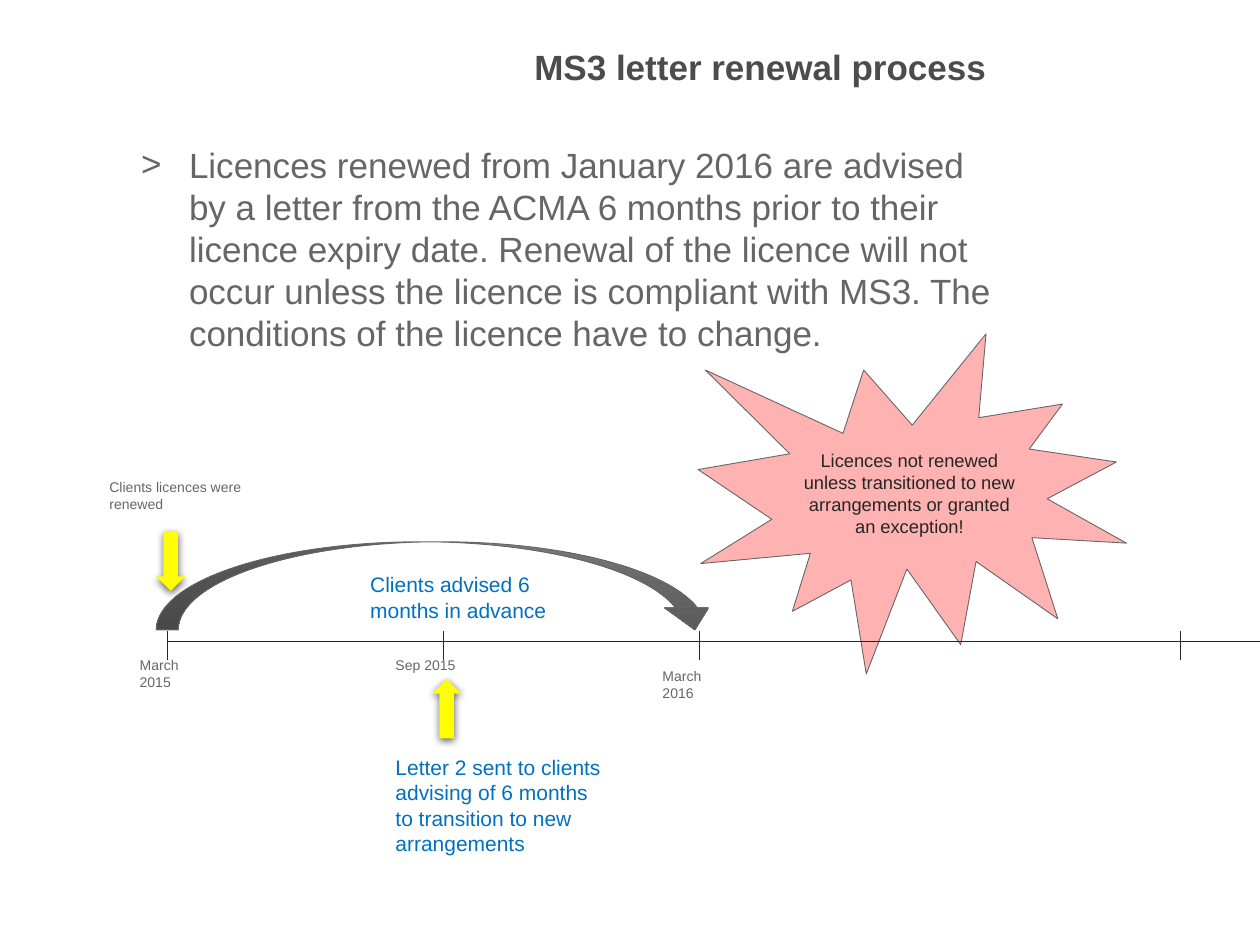
from dataclasses import dataclass

from lxml import etree
from pptx import Presentation
from pptx.dml.color import RGBColor
from pptx.enum.dml import MSO_FILL
from pptx.enum.shapes import MSO_CONNECTOR, MSO_SHAPE
from pptx.enum.text import MSO_ANCHOR, MSO_AUTO_SIZE, PP_ALIGN
from pptx.oxml.ns import qn
from pptx.util import Emu, Inches, Pt

STRAIGHT = MSO_CONNECTOR.STRAIGHT
DOWN_ARROW = MSO_SHAPE.DOWN_ARROW
CURVED_ARROW = MSO_SHAPE.CURVED_DOWN_ARROW
BURST = MSO_SHAPE.EXPLOSION1
TOP, MIDDLE = MSO_ANCHOR.TOP, MSO_ANCHOR.MIDDLE
LEFT, CENTER = PP_ALIGN.LEFT, PP_ALIGN.CENTER
SOLID = MSO_FILL.SOLID

WIDTH, HEIGHT = 10, 7.5
AXIS_Y = 5.09
TICK_TOP, TICK_BOTTOM = 5.01, 5.24
START, ADVICE, EXPIRY, LAST = 1.33, 3.52, 5.55, 9.37


@dataclass(frozen=True)
class Theme:
    font: str = "Arial"
    heading: str = "4C4C4C"
    grey: str = "666666"
    blue: str = "0070C0"
    dark: str = "262626"
    yellow: str = "FFFF00"
    red: str = "FF0000"
    shadow: str = "000000"
    arc: tuple = ((0, "797979"), (50, "666666"), (100, "5B5B5B"))
    large: float = 20
    note: float = 12
    burst: float = 10.5
    label: float = 8
    hairline: float = 0.5


THEME = Theme()


def color(value):
    return RGBColor.from_string(value)


def add_child(parent, tag, **attributes):
    element = etree.SubElement(parent, qn(tag))
    for name, value in attributes.items():
        element.set(name, str(value))
    return element


def place(shape, left, top, width, height):
    shape.left, shape.top = Inches(left), Inches(top)
    shape.width, shape.height = Inches(width), Inches(height)


def write(shape, text, size, ink, bold=False, align=LEFT, anchor=TOP):
    frame = shape.text_frame
    frame.word_wrap = True
    frame.auto_size = MSO_AUTO_SIZE.NONE
    frame.vertical_anchor = anchor
    paragraph = frame.paragraphs[0]
    paragraph.alignment = align
    paragraph.space_before = Pt(0)
    run = paragraph.add_run()
    run.text = text
    font = run.font
    font.name, font.size, font.bold = THEME.font, Pt(size), bold
    font.color.rgb = color(ink)
    return paragraph


def add_label(slide, text, box, size=THEME.label, ink=THEME.grey):
    shape = slide.shapes.add_textbox(*map(Inches, box))
    write(shape, text, size, ink)


def add_bullet(paragraph, character, indent):
    properties = paragraph._p.get_or_add_pPr()
    properties.set("marL", str(Inches(indent)))
    properties.set("indent", str(-Inches(indent)))
    add_child(properties, "a:buFont", typeface=THEME.font)
    add_child(properties, "a:buChar", char=character)


def add_outlined_shape(slide, kind, box, line=None):
    shape = slide.shapes.add_shape(kind, *map(Inches, box))
    shape.shadow.inherit = False
    if line:
        shape.line.color.rgb = color(line)
        shape.line.width = Pt(THEME.hairline)
    else:
        shape.line.fill.background()
    return shape


def fill_solid(shape, value, opacity=100):
    shape.fill.solid()
    shape.fill.fore_color.rgb = color(value)
    if opacity < 100:
        swatch = shape._element.spPr.find(qn("a:solidFill"))[0]
        add_child(swatch, "a:alpha", val=opacity * 1000)


def add_arc(slide):
    shape = add_outlined_shape(slide, CURVED_ARROW, (1.24, 4.3, 4.45, 0.7), THEME.grey)
    shape.fill.gradient()
    shape.fill.gradient_angle = 270
    stops = shape._element.spPr.find(qn("a:gradFill")).find(qn("a:gsLst"))
    for stop in list(stops):
        stops.remove(stop)
    for position, value in THEME.arc:
        stop = add_child(stops, "a:gs", pos=position * 1000)
        add_child(stop, "a:srgbClr", val=value)


def add_pointer(slide, left, top, rotation=0):
    """Add a yellow block arrow with a soft shadow below it."""
    shape = add_outlined_shape(slide, DOWN_ARROW, (left, top, 0.23, 0.47))
    fill_solid(shape, THEME.yellow)
    shape.rotation = rotation
    effects = shape._element.spPr.find(qn("a:effectLst"))
    shadow = add_child(effects, "a:outerShdw", blurRad=Pt(4.5), dist=Pt(1.5),
                       dir=90 * 60000, rotWithShape=0)
    swatch = add_child(shadow, "a:srgbClr", val=THEME.shadow)
    add_child(swatch, "a:alpha", val=63000)


def add_burst(slide):
    shape = add_outlined_shape(slide, BURST, (5.54, 2.65, 3.4, 2.7), THEME.grey)
    fill_solid(shape, THEME.red, opacity=30)
    write(shape, "Licences not renewed unless transitioned to new arrangements "
          "or granted an exception!", THEME.burst, THEME.dark,
          align=CENTER, anchor=MIDDLE)


def add_timeline(slide):
    group = slide.shapes.add_group_shape()
    ticks = [(x, TICK_TOP, x, TICK_BOTTOM) for x in (START, EXPIRY, LAST, ADVICE)]
    for ends in [(START, AXIS_Y, WIDTH, AXIS_Y)] + ticks:
        line = group.shapes.add_connector(STRAIGHT, *map(Inches, ends))
        line.line.color.rgb = color(THEME.dark)
        line.line.width = Pt(THEME.hairline)
        add_child(line._element.spPr, "a:effectLst")


def fill_placeholders(slide):
    title, body = slide.shapes.title, slide.placeholders[1]
    place(title, 4.14, 0.31, 4.38, 0.44)
    write(title, "MS3 letter renewal process", THEME.large, THEME.heading, bold=True)
    place(body, 1.02, 1.09, 6.98, 1.78)
    paragraph = write(
        body, "Licences renewed from January 2016 are advised by a letter from the "
        "ACMA 6 months prior to their licence expiry date. Renewal of the licence "
        "will not occur unless the licence is compliant with MS3. The conditions "
        "of the licence have to change.", THEME.large, THEME.grey)
    paragraph.level = 1
    add_bullet(paragraph, ">", 0.38)


def main():
    presentation = Presentation()
    presentation.slide_width = Inches(WIDTH)
    presentation.slide_height = Inches(HEIGHT)
    slide = presentation.slides.add_slide(presentation.slide_layouts[1])

    fill_placeholders(slide)
    add_label(slide, "March 2016", (5.16, 5.25, 0.7, 0.37))
    add_label(slide, "March 2015", (1.01, 5.16, 0.7, 0.37))
    add_arc(slide)
    add_label(slide, "Clients licences were renewed", (0.77, 3.75, 1.33, 0.5))
    add_pointer(slide, 1.24, 4.22)
    add_label(slide, "Clients advised 6 months in advance",
              (2.84, 4.49, 1.73, 0.64), THEME.note, THEME.blue)
    add_pointer(slide, 3.43, 5.39, rotation=180)
    add_label(slide, "Letter 2 sent to clients advising of 6 months to transition "
              "to new arrangements", (3.04, 5.94, 1.88, 0.91), THEME.note, THEME.blue)
    add_label(slide, "Sep 2015", (3.04, 5.16, 0.7, 0.24))
    add_burst(slide)
    add_timeline(slide)
    presentation.save("out.pptx")


if __name__ == "__main__":
    main()
